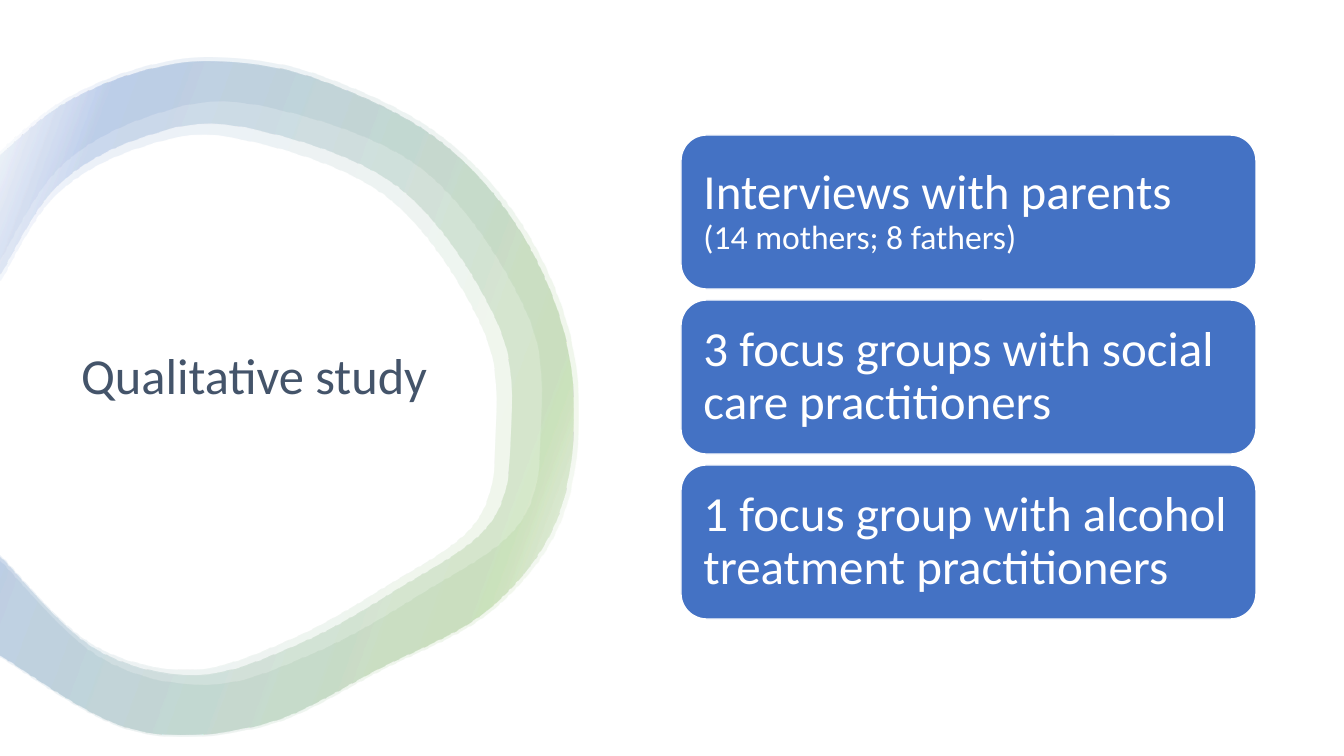
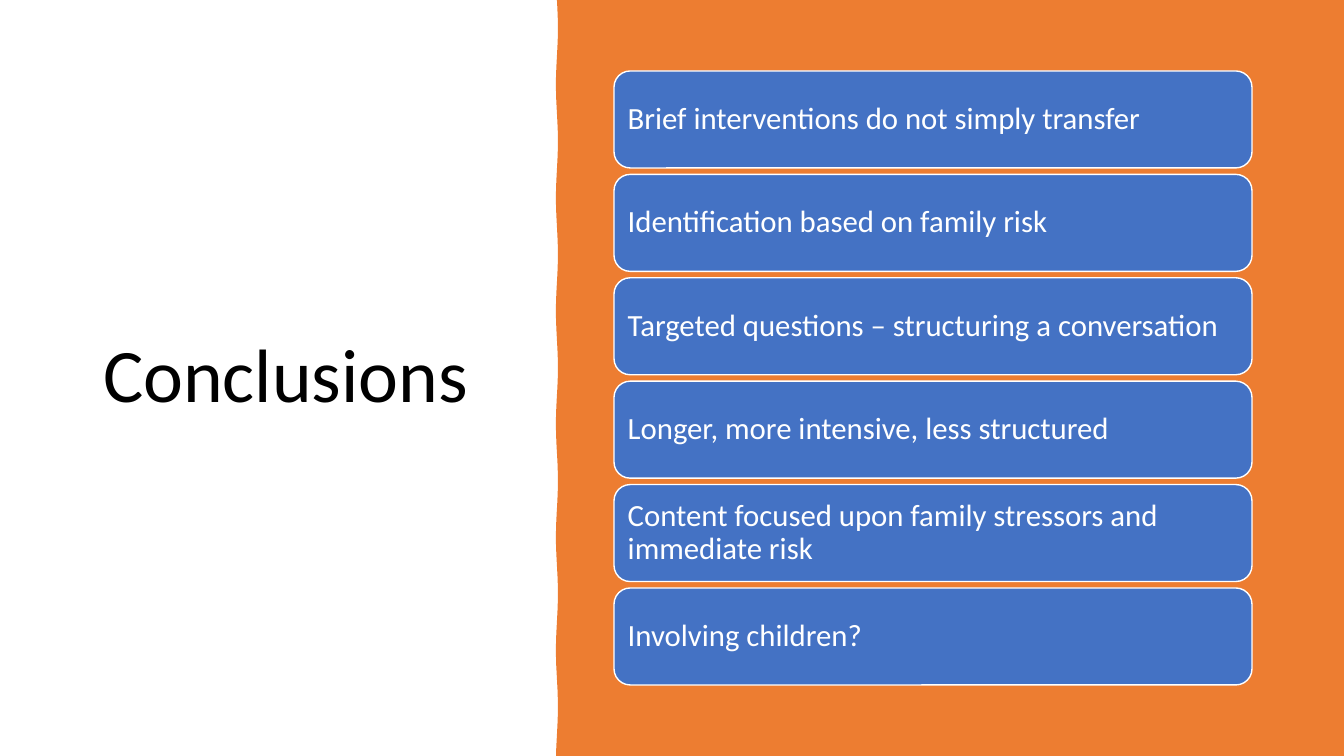
import math

import pptx
import pptx.dml.color
import pptx.enum.shapes
import pptx.enum.text
import pptx.oxml
import pptx.oxml.ns
import pptx.util

colour = pptx.dml.color.RGBColor.from_string
FONT = "Calibri"
WHITE, BLACK, SLATE = "FFFFFF", "000000", "44546A"
BLUE, GREEN, ORANGE = "4472C4", "70AD47", "ED7D31"
SLIDE_WIDTH, SLIDE_HEIGHT = 1344, 756
TITLE_ONLY = 5
CURVE_STEPS = 8


def px(length):
    return pptx.util.Emu(round(length * 12192000 / SLIDE_WIDTH))


def smooth(points):
    """Return px points on a Catmull-Rom curve through the given points."""
    padded = [points[0], *points, points[-1]]
    curve = []
    for before, start, end, after in zip(padded, padded[1:], padded[2:], padded[3:]):
        for step in range(CURVE_STEPS):
            t = step / CURVE_STEPS
            curve.append([
                (2 * b + (c - a) * t + (2 * a - 5 * b + 4 * c - d) * t ** 2
                 + (3 * b - a - 3 * c + d) * t ** 3) / 2
                for a, b, c, d in zip(before, start, end, after)
            ])
    return [*curve, points[-1]]


deck = pptx.Presentation()
deck.slide_width, deck.slide_height = px(SLIDE_WIDTH), px(SLIDE_HEIGHT)

# Ring: four bands, each scaled from the same two edges about a point on the left
ring_outer = smooth([
    (0, 155), (60, 106), (136, 73), (213, 62), (312, 78), (436, 139), (524, 239),
    (570, 367), (560, 508), (491, 606), (378, 668), (260, 724), (130, 728), (0, 655),
])
ring_inner = smooth([
    (0, 556), (93, 647), (196, 674), (296, 644), (394, 590), (489, 523), (510, 434),
    (496, 322), (397, 187), (240, 127), (141, 138), (56, 187), (0, 275),
])
ring_centre = 500
ring_bands = []
for outer_scale, inner_scale in [(1.01, 1.06), (1, 1), (1, 0.97), (1, 1)]:
    edges = [(ring_outer, outer_scale), (ring_inner, inner_scale)]
    ring_bands.append([
        (x * scale, ring_centre + (y - ring_centre) * scale)
        for edge, scale in edges for x, y in edge
    ])
ring_stops = [(2, WHITE), (16, GREEN), (85, BLUE), (100, WHITE)]
ring_opacity = 10

# Orange panel with a slightly wavy left edge
panel = [(557 + math.sin(y / 18), y) for y in range(0, SLIDE_HEIGHT + 1, 6)]
panel += [(SLIDE_WIDTH, SLIDE_HEIGHT), (SLIDE_WIDTH, 0)]

slide_plans = [
    {
        "title": "Qualitative study", "title_box": (71, 137, 425, 482),
        "title_size": 36, "title_colour": SLATE,
        "outlines": ring_bands, "solid": None,
        "left": 681, "top": 135, "width": 575, "bottom": 619, "height": 154,
        "margin": 15, "size": 35,
        "cards": [
            "Interviews with parents\v(14 mothers; 8 fathers)",
            "3 focus groups with social care practitioners",
            "1 focus group with alcohol treatment practitioners",
        ],
    },
    {
        "title": "Conclusions", "title_box": (93, 71, 423, 614),
        "title_size": 54, "title_colour": BLACK,
        "outlines": [panel], "solid": ORANGE,
        "left": 614, "top": 71, "width": 638, "bottom": 685, "height": 97,
        "margin": 9, "size": 22,
        "cards": [
            "Brief interventions do not simply transfer",
            "Identification based on family risk",
            "Targeted questions – structuring a conversation",
            "Longer, more intensive, less structured",
            "Content focused upon family stressors and immediate risk",
            "Involving children?",
        ],
    },
]

for plan in slide_plans:
    page = deck.slides.add_slide(deck.slide_layouts[TITLE_ONLY])

    for outline in plan["outlines"]:
        corners = [(px(x), px(y)) for x, y in outline]
        builder = page.shapes.build_freeform(*corners[0])
        builder.add_line_segments(corners[1:], close=True)
        shape = builder.convert_to_shape()
        shape.shadow.inherit = False
        shape.line.fill.background()
        if plan["solid"]:
            shape.fill.solid()
            shape.fill.fore_color.rgb = colour(plan["solid"])
            continue
        shape.fill.gradient()
        shape.fill.gradient_angle = 160
        stop_list = shape.element.spPr.find(".//" + pptx.oxml.ns.qn("a:gsLst"))
        for old_stop in list(stop_list):
            stop_list.remove(old_stop)
        for position, hex_value in ring_stops:
            stop_list.append(pptx.oxml.parse_xml(
                f'<a:gs {pptx.oxml.ns.nsdecls("a")} pos="{position * 1000}">'
                f'<a:srgbClr val="{hex_value}"><a:alpha val="{ring_opacity * 1000}"/>'
                '</a:srgbClr></a:gs>'))

    title = page.shapes.title
    title.left, title.top, title.width, title.height = map(px, plan["title_box"])
    title.text_frame.text = plan["title"]
    text_boxes = [(title, plan["title_size"], plan["title_colour"])]

    pitch = (plan["bottom"] - plan["top"] - plan["height"]) / (len(plan["cards"]) - 1)
    for index, text in enumerate(plan["cards"]):
        card = page.shapes.add_shape(
            pptx.enum.shapes.MSO_SHAPE.ROUNDED_RECTANGLE,
            px(plan["left"]), px(plan["top"] + index * pitch),
            px(plan["width"]), px(plan["height"]))
        card.shadow.inherit = False
        card.fill.solid()
        card.fill.fore_color.rgb = colour(BLUE)
        card.line.color.rgb = colour(WHITE)
        card.line.width = pptx.util.Pt(1)
        frame = card.text_frame
        frame.margin_left = frame.margin_right = px(plan["margin"])
        frame.margin_top = frame.margin_bottom = px(plan["margin"])
        frame.paragraphs[0].text = text
        text_boxes.append((card, plan["size"], WHITE))

    for box, size, hex_value in text_boxes:
        frame = box.text_frame
        frame.word_wrap = True
        frame.auto_size = pptx.enum.text.MSO_AUTO_SIZE.NONE
        frame.vertical_anchor = pptx.enum.text.MSO_ANCHOR.MIDDLE
        para = frame.paragraphs[0]
        para.alignment = pptx.enum.text.PP_ALIGN.LEFT
        para.line_spacing = 0.9
        for line_number, span in enumerate(para.runs):
            span.font.name = FONT
            span.font.size = pptx.util.Pt(24 if line_number else size)
            span.font.color.rgb = colour(hex_value)

deck.save("out.pptx")
